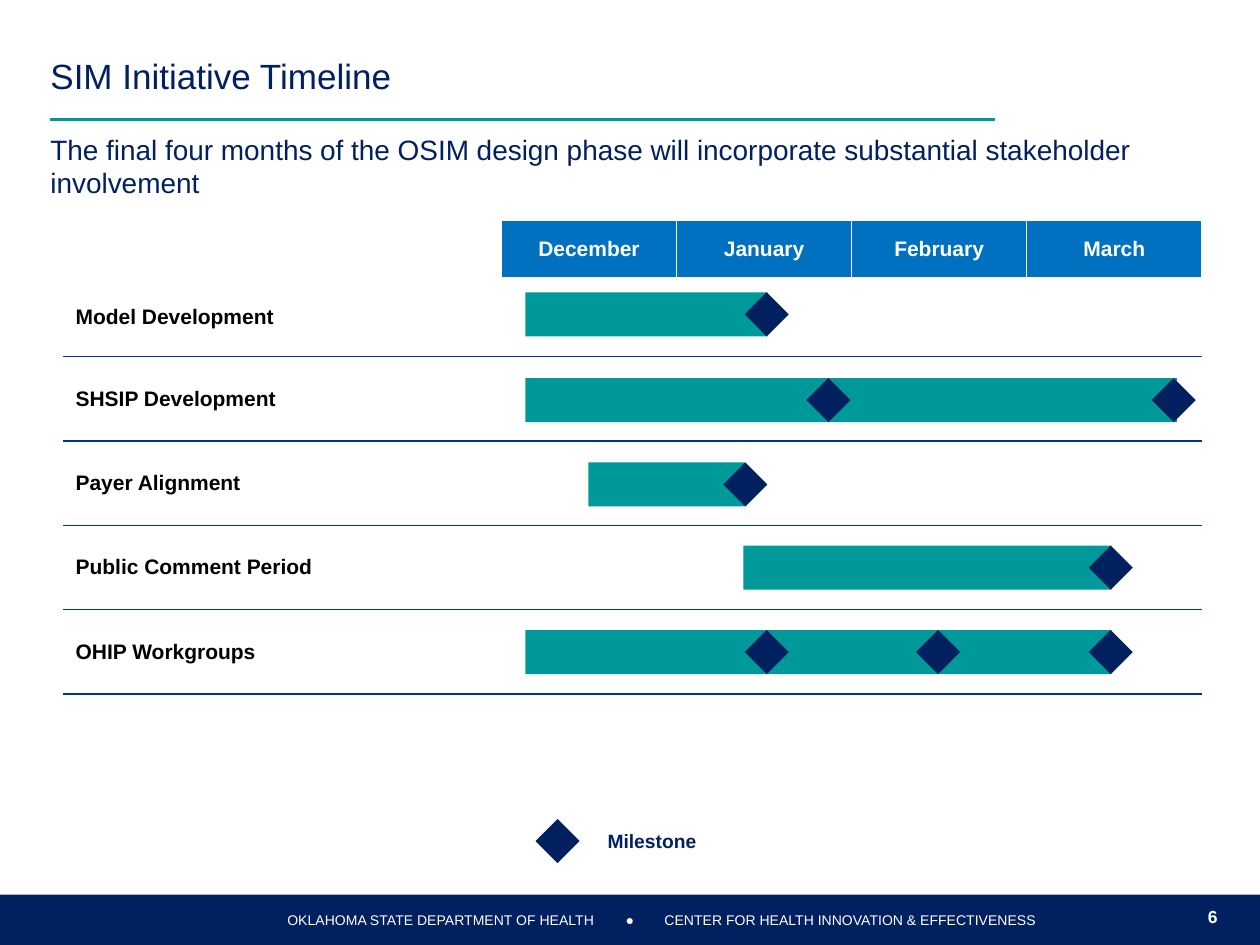
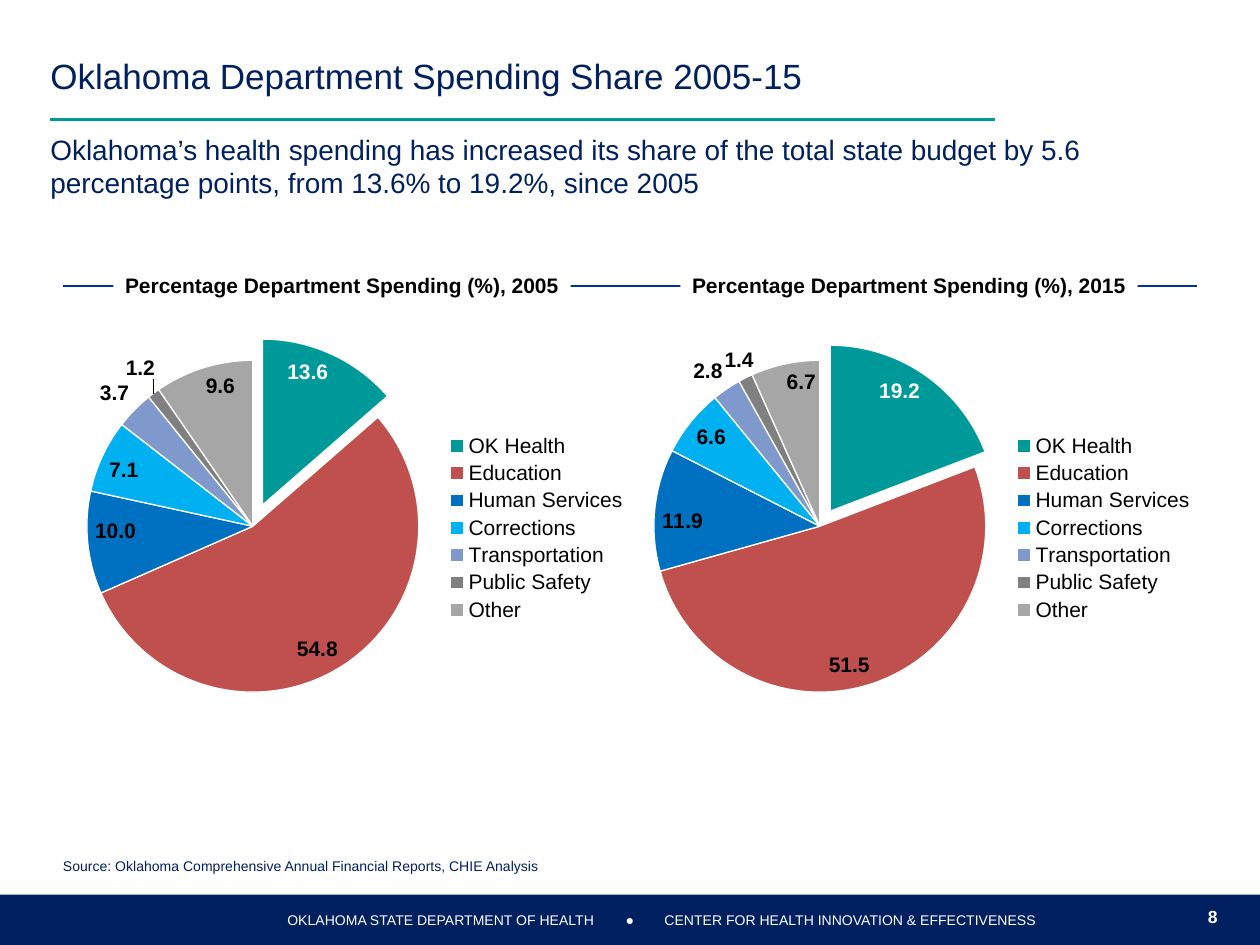
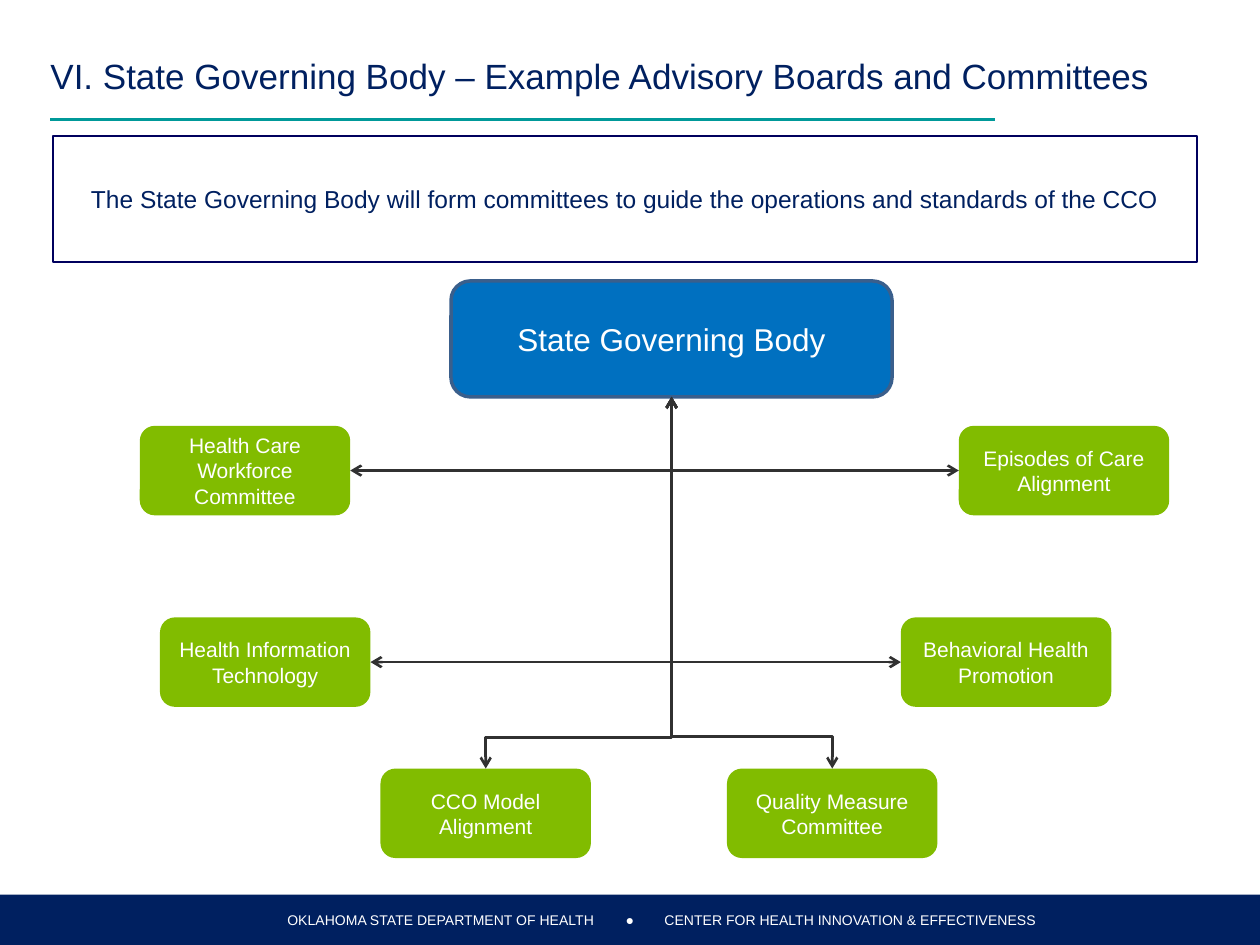
from lxml import etree
from pptx import Presentation
from pptx.chart.data import CategoryChartData
from pptx.dml.color import RGBColor
from pptx.enum.chart import XL_CHART_TYPE, XL_LABEL_POSITION as LabelAt, XL_LEGEND_POSITION
from pptx.enum.shapes import MSO_CONNECTOR as Link, MSO_SHAPE as Shape
from pptx.enum.text import MSO_ANCHOR as Anchor, MSO_AUTO_SIZE, PP_ALIGN as Align
from pptx.oxml import parse_xml
from pptx.oxml.ns import nsdecls, qn
from pptx.util import Inches, Pt

COLORS = {
    "navy": "002060", "teal": "009999", "blue": "0070C0", "rule": "003399",
    "white": "FFFFFF", "black": "000000", "green": "81BC00", "edge": "3A5F8C",
    "frame": "00005E", "arrow": "313131", "red": "C0504D", "sky": "00B0F0",
    "periwinkle": "8099CC", "gray": "808080", "silver": "A6A6A6",
}
RGB = {name: RGBColor.from_string(code) for name, code in COLORS.items()}
FONT = "Arial"


def write(frame, text, size=12, color="navy", bold=False, align=Align.LEFT,
          anchor=Anchor.MIDDLE, insets=(0, 0), wrap=True):
    """Fill a text frame; insets are (sides, top and bottom) in inches."""
    frame.auto_size = MSO_AUTO_SIZE.NONE
    frame.word_wrap = wrap
    frame.vertical_anchor = anchor
    frame.margin_left = frame.margin_right = Inches(insets[0])
    frame.margin_top = frame.margin_bottom = Inches(insets[1])
    frame.text = text
    paragraph = frame.paragraphs[0]
    paragraph.alignment = align
    paragraph.space_before = Pt(0)
    font = paragraph.runs[0].font
    font.name, font.size, font.bold = FONT, Pt(size), bold
    font.color.rgb = RGB[color]


def draw(slide, kind, box, fill=None, line=None, width=1, text=None, **text_format):
    """Add a preset shape, or a text box when kind is None."""
    box = [Inches(length) for length in box]
    if kind is None:
        shape = slide.shapes.add_textbox(*box)
    else:
        shape = slide.shapes.add_shape(kind, *box)
        shape.shadow.inherit = False
        if fill:
            shape.fill.solid()
            shape.fill.fore_color.rgb = RGB[fill]
        else:
            shape.fill.background()
        if line:
            shape.line.color.rgb = RGB[line]
            shape.line.width = Pt(width)
        else:
            shape.line.fill.background()
    if text:
        write(shape.text_frame, text, **text_format)


prs = Presentation()
prs.slide_width, prs.slide_height = Inches(10), Inches(7.5)
connectors = []  # (connector, color, width, has arrows), styled at the end

# Shared frame: title, subtitle, rule, footer band and page number
PAGES = [
    ("SIM Initiative Timeline",
     "The final four months of the OSIM design phase will incorporate "
     "substantial stakeholder involvement", "6"),
    ("Oklahoma Department Spending Share 2005-15",
     "Oklahoma’s health spending has increased its share of the total state budget "
     "by 5.6 percentage points, from 13.6% to 19.2%, since 2005", "8"),
    ("VI. State Governing Body – Example Advisory Boards and Committees", None, None),
]
FOOTER = [
    (2, 3, "OKLAHOMA STATE DEPARTMENT OF HEALTH"),
    (4.75, 0.5, "●"),
    (5.25, 3, "CENTER FOR HEALTH INNOVATION & EFFECTIVENESS"),
]
for title, subtitle, number in PAGES:
    slide = prs.slides.add_slide(prs.slide_layouts[1 if subtitle else 5])
    heading = slide.shapes.title
    heading.left, heading.top = Inches(0.4), Inches(0.25)
    heading.width, heading.height = Inches(9.2), Inches(0.7)
    write(heading.text_frame, title, size=20, insets=(0, 0.05))
    if subtitle:
        message = slide.placeholders[1]
        message.left, message.top = Inches(0.4), Inches(1)
        message.width, message.height = Inches(9.2), Inches(0.5)
        write(message.text_frame, subtitle, size=16, anchor=Anchor.TOP, insets=(0, 0.05))
        # Replacing the text resets the paragraph, so the bullet goes off afterwards
        properties = message.text_frame.paragraphs[0]._p.get_or_add_pPr()
        properties.set("marL", "0")
        properties.set("indent", "0")
        etree.SubElement(properties, qn("a:buNone"))
    rule = slide.shapes.add_connector(
        Link.STRAIGHT, Inches(0.4), Inches(0.95), Inches(7.9), Inches(0.95))
    connectors.append((rule, "teal", 2, False))
    draw(slide, Shape.RECTANGLE, (0, 7.1, 10, 0.4), "navy")
    for left, width, words in FOOTER:
        draw(slide, None, (left, 7.1, width, 0.4), text=words, size=8, color="white",
             align=Align.CENTER, wrap=False)
    if number:
        draw(slide, None, (9.5, 7.15, 0.25, 0.25), text=number, size=10, color="white",
             bold=True, align=Align.CENTER, wrap=False)
timeline, spending, governance = prs.slides

# Timeline: month table
MONTHS = ["December", "January", "February", "March"]
# Activity, bar left, bar width, bar top, milestone lefts
ACTIVITIES = [
    ("Model Development", 4.17, 1.92, 2.32, [5.91]),
    ("SHSIP Development", 4.17, 5.17, 3, [6.4, 9.14]),
    ("Payer Alignment", 4.67, 1.24, 3.67, [5.74]),
    ("Public Comment Period", 5.9, 2.92, 4.33, [8.64]),
    ("OHIP Workgroups", 4.17, 4.65, 5, [5.91, 7.27, 8.64]),
]
NO_GRID_STYLE = "{2D5ABB26-0587-4C30-8999-92F81FD0307C}"
schedule = timeline.shapes.add_table(
    len(ACTIVITIES) + 1, len(MONTHS) + 1,
    Inches(0.5), Inches(1.75), Inches(9.04), Inches(3.76)).table
schedule._tbl.tblPr.find(qn("a:tableStyleId")).text = NO_GRID_STYLE
schedule.horz_banding = False
for column, width in zip(schedule.columns, [3.48] + [1.39] * len(MONTHS)):
    column.width = Inches(width)
for row, height in zip(schedule.rows, [0.45, 0.63] + [0.67] * 4):
    row.height = Inches(height)

grid = [[""] + MONTHS] + [[activity[0]] + [""] * len(MONTHS) for activity in ACTIVITIES]
for r, texts in enumerate(grid):
    for c, text in enumerate(texts):
        cell = schedule.cell(r, c)
        header = r == 0
        if text:
            write(cell.text_frame, text, bold=True, color="white" if header else "black",
                  align=Align.CENTER if header else Align.LEFT)
        cell.vertical_anchor = Anchor.MIDDLE
        cell.margin_left = Inches(0 if header else 0.1)
        cell.margin_right = Inches(0 if header else 0.05)
        cell.margin_top = cell.margin_bottom = Inches(0 if header else 0.1)
        sides, color, points = (("lnL", "lnR"), "white", 0.75) if header else (("lnB",), "rule", 1)
        for side in sides:
            cell._tc.get_or_add_tcPr().append(parse_xml(
                f'<a:{side} {nsdecls("a")} w="{Pt(points)}"><a:solidFill>'
                f'<a:srgbClr val="{COLORS[color]}"/></a:solidFill></a:{side}>'))
        cell.fill.solid()
        cell.fill.fore_color.rgb = RGB["blue" if header and c else "white"]

# Timeline: bars, milestones and key
MARK = 0.35
for _, left, width, top, milestones in ACTIVITIES:
    draw(timeline, Shape.RECTANGLE, (left, top, width, MARK), "teal")
    for milestone in milestones:
        draw(timeline, Shape.DIAMOND, (milestone, top, MARK, MARK), "navy")
draw(timeline, Shape.DIAMOND, (4.25, 6.5, MARK, MARK), "navy")
draw(timeline, None, (4.6, 6.5, 1.15, MARK), text="Milestone", size=11, bold=True,
     align=Align.CENTER, wrap=False)

# Spending: one headed pie per year
DEPARTMENTS = {
    "OK Health": "teal", "Education": "red", "Human Services": "blue",
    "Corrections": "sky", "Transportation": "periwinkle",
    "Public Safety": "gray", "Other": "silver",
}
# Year, left, shares, offset of the health slice in percent, shift of the safety label
YEARS = [
    (2005, 0.5, (13.6, 54.8, 10, 7.1, 3.7, 1.2, 9.6), 14, (0.01, -0.02)),
    (2015, 5, (19.2, 51.5, 11.9, 6.6, 2.8, 1.4, 6.7), 11, (0.02, 0)),
]
PLOT_AREA = {"x": 0.041, "y": 0.087, "w": 0.576, "h": 0.818}
SMALL_SHARE = 5
for year, left, shares, offset, (shift_x, shift_y) in YEARS:
    header_line = spending.shapes.add_connector(
        Link.STRAIGHT, Inches(left), Inches(2.27), Inches(left + 4.5), Inches(2.27))
    connectors.append((header_line, "rule", 1, False))
    draw(spending, Shape.RECTANGLE, (left + 0.4, 2.17, 3.63, 0.19), "white",
         text=f"Percentage Department Spending (%), {year}", color="black", bold=True,
         align=Align.CENTER, anchor=Anchor.BOTTOM, wrap=False)

    data = CategoryChartData(number_format="0.0")
    data.categories = list(DEPARTMENTS)
    data.add_series("Series 1", shares)
    pie = spending.shapes.add_chart(
        XL_CHART_TYPE.PIE, Inches(left), Inches(2.58), Inches(4.58), Inches(3.22), data).chart
    pie.has_title = False
    pie.font.name, pie.font.size = FONT, Pt(12)
    pie.font.color.rgb = RGB["black"]
    pie.has_legend = True
    pie.legend.position = XL_LEGEND_POSITION.RIGHT
    pie.legend.include_in_layout = False

    plot = pie.plots[0]
    plot.vary_by_categories = True
    plot.has_data_labels = True
    plot.data_labels.show_value = True
    plot.data_labels.show_percentage = False
    plot.data_labels.number_format = "0.0"
    plot.data_labels.number_format_is_linked = False
    for i, (share, color) in enumerate(zip(shares, DEPARTMENTS.values())):
        point = plot.series[0].points[i]
        point.format.fill.solid()
        point.format.fill.fore_color.rgb = RGB[color]
        point.format.line.color.rgb = RGB["white"]
        point.format.line.width = Pt(0.75)
        label = point.data_label
        label.font.name, label.font.size, label.font.bold = FONT, Pt(12), True
        label.font.color.rgb = RGB["black" if i else "white"]
        label.position = LabelAt.OUTSIDE_END if share < SMALL_SHARE else LabelAt.INSIDE_END

    # Keep the safety label clear of its neighbour
    safety = list(DEPARTMENTS).index("Public Safety")
    for index in plot.series[0]._element.iter(qn("c:idx")):
        if index.getparent().tag == qn("c:dLbl") and index.get("val") == str(safety):
            index.addnext(parse_xml(
                f'<c:layout {nsdecls("c")}><c:manualLayout><c:x val="{shift_x}"/>'
                f'<c:y val="{shift_y}"/></c:manualLayout></c:layout>'))

    health_slice = plot.series[0]._element.find(qn("c:dPt"))
    health_slice.find(qn("c:spPr")).addprevious(
        parse_xml(f'<c:explosion {nsdecls("c")} val="{offset}"/>'))
    plot_area = pie._chartSpace.chart.plotArea
    for layout in plot_area.findall(qn("c:layout")):
        plot_area.remove(layout)
    modes = '<c:layoutTarget val="inner"/><c:xMode val="edge"/><c:yMode val="edge"/>'
    sizes = "".join(f'<c:{key} val="{value}"/>' for key, value in PLOT_AREA.items())
    plot_area.insert(0, parse_xml(
        f'<c:layout {nsdecls("c")}><c:manualLayout>{modes}{sizes}</c:manualLayout></c:layout>'))

draw(spending, None, (0.5, 6.75, 8.5, 0.25), size=8,
     text="Source: Oklahoma Comprehensive Annual Financial Reports, CHIE Analysis")

# Governance: callout, body and committees
draw(governance, Shape.RECTANGLE, (0.42, 1.08, 9.08, 1), line="frame", size=14,
     align=Align.CENTER, insets=(0.05, 0.05),
     text="The State Governing Body will form committees to guide the operations "
          "and standards of the CCO")
draw(governance, Shape.ROUNDED_RECTANGLE, (3.58, 2.23, 3.5, 0.92), "blue", "edge", 2,
     text="State Governing Body", size=18, color="white", align=Align.CENTER,
     insets=(0.1, 0.05))
HUB_X, HUB_Y = 5.33, 3.15
WIDE, TALL = 1.67, 0.71
# Name, left, top, bend of the link as a share of its rise (None: leaves sideways)
COMMITTEES = [
    ("Health Care Workforce Committee", 1.11, 3.38, None),
    ("Episodes of Care Alignment", 7.61, 3.38, None),
    ("Health Information Technology", 1.27, 4.9, None),
    ("Behavioral Health Promotion", 7.15, 4.9, None),
    ("CCO Model Alignment", 3.02, 6.1, 0.083),
    ("Quality Measure Committee", 5.77, 6.1, 0.087),
]
for name, left, top, bend in COMMITTEES:
    draw(governance, Shape.ROUNDED_RECTANGLE, (left, top, WIDE, TALL), "green",
         text=name, color="white", align=Align.CENTER, insets=(0.1, 0.05))
    on_left = left < HUB_X - WIDE / 2
    if bend is None:
        ends = (left + WIDE if on_left else left, top + TALL / 2, HUB_X, HUB_Y)
    else:
        # A link that starts upward is a sideways one turned about its centre
        start_x = left + WIDE / 2
        middle_x, middle_y = (start_x + HUB_X) / 2, (top + HUB_Y) / 2
        half_rise, half_run = (top - HUB_Y) / 2, abs(start_x - HUB_X) / 2
        side = 1 if on_left else -1
        ends = (middle_x + side * half_rise, middle_y + half_run,
                middle_x - side * half_rise, middle_y - half_run)
    link = governance.shapes.add_connector(Link.ELBOW, *[Inches(end) for end in ends])
    connectors.append((link, "arrow", 1.5, True))
    geometry = link._element.spPr.find(qn("a:prstGeom"))
    if bend is None:
        geometry.set("prst", "bentConnector2")
    else:
        link._element.spPr.find(qn("a:xfrm")).set("rot", str((90 if on_left else 270) * 60000))
        etree.SubElement(geometry.find(qn("a:avLst")), qn("a:gd"),
                         name="adj1", fmla=f"val {round(bend * 100000)}")

# Line style of every connector
for connector, color, width, has_arrows in connectors:
    connector.line.color.rgb = RGB[color]
    connector.line.width = Pt(width)
    outline = connector._element.spPr.find(qn("a:ln"))
    if has_arrows:
        for end in ("a:headEnd", "a:tailEnd"):
            etree.SubElement(outline, qn(end), type="arrow")
    etree.SubElement(connector._element.spPr, qn("a:effectLst"))

prs.save("out.pptx")
